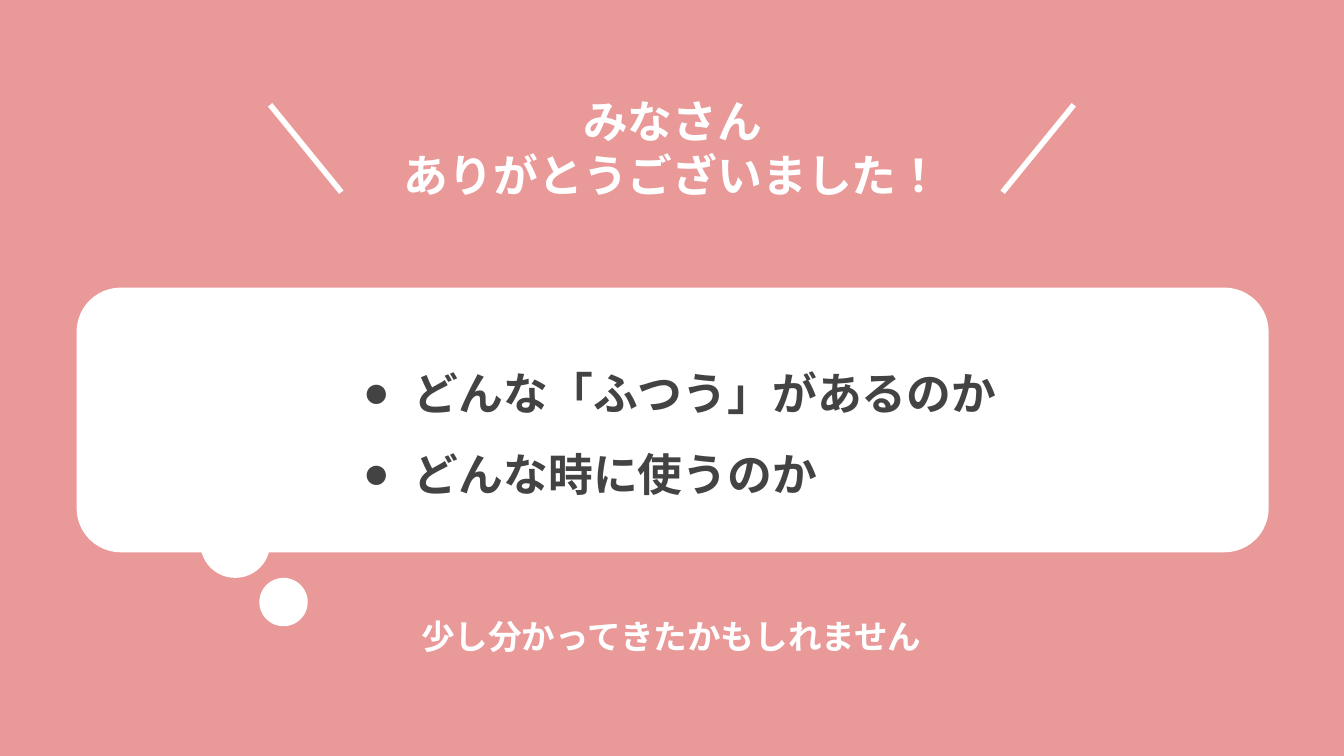
from lxml import etree
from pptx import Presentation
from pptx.dml.color import RGBColor
from pptx.enum.lang import MSO_LANGUAGE_ID
from pptx.enum.shapes import MSO_CONNECTOR, MSO_SHAPE
from pptx.enum.text import MSO_ANCHOR, MSO_AUTO_SIZE, PP_ALIGN
from pptx.oxml.ns import qn
from pptx.util import Inches, Pt

STRAIGHT = MSO_CONNECTOR.STRAIGHT
ROUNDED, OVAL = MSO_SHAPE.ROUNDED_RECTANGLE, MSO_SHAPE.OVAL
TOP, NO_FIT = MSO_ANCHOR.TOP, MSO_AUTO_SIZE.NONE
LEFT, CENTER = PP_ALIGN.LEFT, PP_ALIGN.CENTER
JAPANESE = MSO_LANGUAGE_ID.JAPANESE

FONT = "Noto Sans CJK JP"
PINK, WHITE, GRAY = "EA9999", "FFFFFF", "434343"
WIDTH = 10
HEIGHT = WIDTH * 9 / 16

THANKS = ["みなさん", "ありがとうございました！"]
QUESTIONS = ["どんな「ふつう」があるのか", "どんな時に使うのか"]
CLOSING = ["少し分かってきたかもしれません"]

THANKS_BOX = (2.54, 0.6, 4.93, 1.01)
QUESTIONS_BOX = (2.48, 2.42, 5.04, 1.41)
CLOSING_BOX = (2.73, 4.48, 4.53, 0.5)
BUBBLE = [
    (ROUNDED, (0.57, 2.14, 8.87, 1.97)),
    (OVAL, (1.49, 3.78, 0.52, 0.52)),
    (OVAL, (1.93, 4.3, 0.36, 0.36)),
]
STROKE_OUTER, STROKE_INNER = (2.01, 0.78), (2.54, 1.43)


def rgb(color):
    return RGBColor.from_string(color)


def inches(values):
    return [Inches(value) for value in values]


def write(holder, box, lines, size, color, align=CENTER, spacing=1.0):
    """Place a text holder and fill it with one bold paragraph per line."""
    holder.left, holder.top, holder.width, holder.height = inches(box)
    frame = holder.text_frame
    frame_format = {"word_wrap": True, "auto_size": NO_FIT, "vertical_anchor": TOP}
    for side in ("left", "top", "right", "bottom"):
        frame_format[f"margin_{side}"] = Inches(0.1)
    for name, value in frame_format.items():
        setattr(frame, name, value)
    frame.text = "\n".join(lines)
    paragraph_format = {"alignment": align, "line_spacing": spacing,
                        "space_before": Pt(0), "space_after": Pt(0)}
    font_format = {"size": Pt(size), "bold": True, "name": FONT,
                   "language_id": JAPANESE}
    for paragraph in frame.paragraphs:
        for name, value in paragraph_format.items():
            setattr(paragraph, name, value)
        font = paragraph.runs[0].font
        for name, value in font_format.items():
            setattr(font, name, value)
        font.color.rgb = rgb(color)
        etree.SubElement(font._element, qn("a:ea")).set("typeface", FONT)


def add_bullets(holder, color):
    for paragraph in holder.text_frame.paragraphs:
        properties = paragraph._p.get_or_add_pPr()
        properties.set("marL", str(Inches(0.5)))
        properties.set("indent", str(Inches(-0.38)))
        bullet_color = etree.SubElement(properties, qn("a:buClr"))
        etree.SubElement(bullet_color, qn("a:srgbClr")).set("val", color)
        etree.SubElement(properties, qn("a:buChar")).set("char", "●")


def add_stroke(slide, start, end):
    stroke = slide.shapes.add_connector(STRAIGHT, *inches(start + end))
    stroke.line.color.rgb = rgb(WHITE)
    stroke.line.width = Pt(3)
    etree.SubElement(stroke._element.spPr, qn("a:effectLst"))


def add_bubble_part(slide, outline, box):
    part = slide.shapes.add_shape(outline, *inches(box))
    part.shadow.inherit = False
    part.fill.solid()
    part.fill.fore_color.rgb = rgb(WHITE)
    part.line.fill.background()


def mirrored(point):
    return (WIDTH - point[0], point[1])


def main():
    deck = Presentation()
    deck.slide_width, deck.slide_height = inches((WIDTH, HEIGHT))
    slide = deck.slides.add_slide(deck.slide_layouts[1])
    slide.background.fill.solid()
    slide.background.fill.fore_color.rgb = rgb(PINK)

    thanks, questions = slide.placeholders
    write(thanks, THANKS_BOX, THANKS, 24, WHITE)
    add_stroke(slide, STROKE_OUTER, STROKE_INNER)
    add_stroke(slide, mirrored(STROKE_OUTER), mirrored(STROKE_INNER))

    for outline, box in BUBBLE:
        add_bubble_part(slide, outline, box)
    slide.shapes._spTree.append(questions._element)  # in front of the bubble
    write(questions, QUESTIONS_BOX, QUESTIONS, 24, GRAY, LEFT, 1.5)
    add_bullets(questions, GRAY)

    closing = slide.shapes.add_textbox(*inches(CLOSING_BOX))
    write(closing, CLOSING_BOX, CLOSING, 18, WHITE)
    deck.save("out.pptx")


if __name__ == "__main__":
    main()
